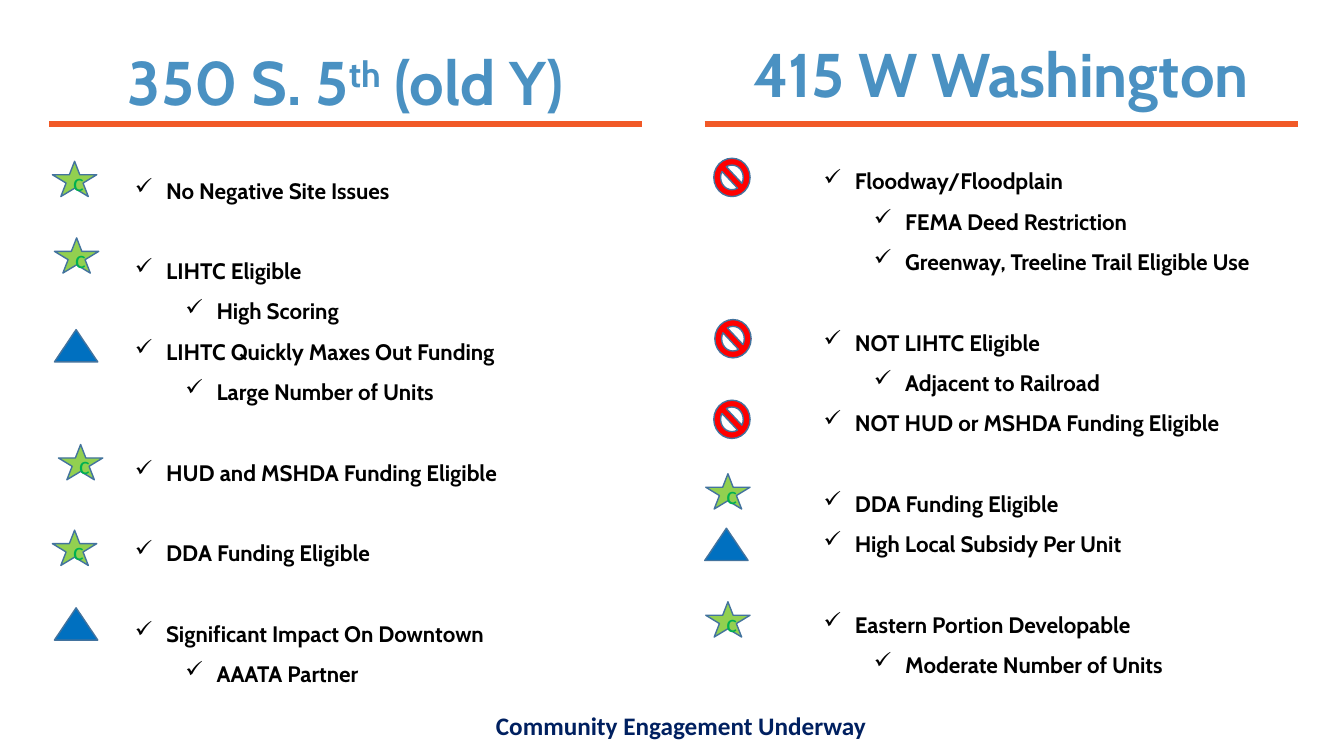
from lxml.etree import SubElement
from pptx import Presentation
from pptx.dml.color import RGBColor
from pptx.enum.shapes import MSO_CONNECTOR, MSO_SHAPE
from pptx.enum.text import MSO_ANCHOR, MSO_AUTO_SIZE, PP_ALIGN
from pptx.oxml.ns import qn
from pptx.util import Inches, Pt

COLORS = {
    "title": "4A91C2", "rule": "F15927", "text": "000000", "footer": "002060",
    "star": "92D050", "letter": "00B050", "stop": "FF0000",
    "triangle": "0070C0", "outline": "43739E",
}
FORMATS = {
    "title": {"name": "Cabin", "size": Pt(44), "bold": True},
    "text": {"name": "Cabin", "size": Pt(16), "bold": True},
    "footer": {"name": "Calibri", "size": Pt(18), "bold": True},
    "letter": {"name": "Calibri", "size": Pt(18)},
}
# Marker name: preset shape, width, height, letter
MARKERS = {
    "star": (MSO_SHAPE.STAR_5_POINT, 0.44, 0.35, "c"),
    "stop": (MSO_SHAPE.NO_SYMBOL, 0.36, 0.38, ""),
    "triangle": (MSO_SHAPE.ISOSCELES_TRIANGLE, 0.43, 0.32, ""),
}
HANGING = 0.31
LEVEL_STEP = 0.5
GROUP_GAP = Pt(28.8)  # one line of the list

# Lists hold groups of (text, level); title parts are (text, superscript)
SITES = [
    {
        "title": [("350 S. 5", False), ("th", True), (" (old Y)", False)],
        "title_at": (0.58, 0.39),
        "rule_left": 0.49,
        "list_at": (1.24, 1.57),
        "groups": [
            [("No Negative Site Issues", 0)],
            [("LIHTC Eligible", 0), ("High Scoring", 1),
             ("LIHTC Quickly Maxes Out Funding", 0), ("Large Number of Units", 1)],
            [("HUD and MSHDA Funding Eligible", 0)],
            [("DDA Funding Eligible", 0)],
            [("Significant Impact On Downtown", 0), ("AAATA Partner", 1)],
        ],
        "markers": [("star", 0.52, 1.6), ("star", 0.54, 2.36), ("triangle", 0.54, 3.27),
                    ("star", 0.58, 4.41), ("star", 0.52, 5.26), ("triangle", 0.54, 6.03)],
    },
    {
        "title": [("415 W Washington", False)],
        "title_at": (7.08, 0.31),
        "rule_left": 6.99,
        "list_at": (8.07, 1.48),
        "groups": [
            [("Floodway/Floodplain", 0), ("FEMA Deed Restriction", 1),
             ("Greenway, Treeline Trail Eligible Use", 1)],
            [("NOT LIHTC Eligible", 0), ("Adjacent to Railroad", 1),
             ("NOT HUD or MSHDA Funding Eligible", 0)],
            [("DDA Funding Eligible", 0), ("High Local Subsidy Per Unit", 0)],
            [("Eastern Portion Developable", 0), ("Moderate Number of Units", 1)],
        ],
        "markers": [("stop", 7.08, 1.57), ("stop", 7.09, 3.17), ("stop", 7.08, 3.97),
                    ("star", 7, 4.7), ("triangle", 6.99, 5.24), ("star", 7, 5.97)],
    },
]


def rgb(name):
    return RGBColor.from_string(COLORS[name])


def add_run(paragraph, text, style):
    run = paragraph.add_run()
    run.text = text
    for attribute, value in FORMATS[style].items():
        setattr(run.font, attribute, value)
    run.font.color.rgb = rgb(style)
    return run


def add_text_frame(slide, left, top, width, height):
    box = slide.shapes.add_textbox(Inches(left), Inches(top), Inches(width), Inches(height))
    frame = box.text_frame
    frame.word_wrap = True
    frame.auto_size = MSO_AUTO_SIZE.SHAPE_TO_FIT_TEXT
    return frame


def add_heading(slide, parts, style, left, top, width, height):
    paragraph = add_text_frame(slide, left, top, width, height).paragraphs[0]
    paragraph.alignment = PP_ALIGN.CENTER
    for text, superscript in parts:
        run = add_run(paragraph, text, style)
        if superscript:
            run.font._element.set("baseline", "30000")


def add_rule(slide, left, top, width):
    rule = slide.shapes.add_connector(
        MSO_CONNECTOR.STRAIGHT, Inches(left), Inches(top), Inches(left + width), Inches(top))
    rule.line.color.rgb = rgb("rule")
    rule.line.width = Pt(4.25)
    SubElement(rule._element.spPr, qn("a:effectLst"))


def add_checklist(slide, groups, left, top):
    frame = add_text_frame(slide, left, top, 5.04, 5.62)
    paragraph = None
    for group in groups:
        for position, (text, level) in enumerate(group):
            starts_group = paragraph is not None and position == 0
            paragraph = frame.paragraphs[0] if paragraph is None else frame.add_paragraph()
            paragraph.level = level
            paragraph.line_spacing = 1.5
            if starts_group:
                paragraph.space_before = GROUP_GAP
            add_run(paragraph, text, "text")
            # Check mark bullet with a hanging indent
            properties = paragraph._p.get_or_add_pPr()
            properties.set("marL", str(Inches(HANGING + level * LEVEL_STEP)))
            properties.set("indent", str(Inches(-HANGING)))
            SubElement(properties, qn("a:buChar"), char="✓")


def add_marker(slide, kind, left, top):
    preset, width, height, letter = MARKERS[kind]
    shape = slide.shapes.add_shape(
        preset, Inches(left), Inches(top), Inches(width), Inches(height))
    shape.shadow.inherit = False
    shape.fill.solid()
    shape.fill.fore_color.rgb = rgb(kind)
    shape.line.color.rgb = rgb("outline")
    shape.line.width = Pt(1)
    if letter:
        shape.text_frame.vertical_anchor = MSO_ANCHOR.MIDDLE
        paragraph = shape.text_frame.paragraphs[0]
        paragraph.alignment = PP_ALIGN.CENTER
        add_run(paragraph, letter, "letter")


def main():
    presentation = Presentation()
    presentation.slide_width = Inches(13.33)
    presentation.slide_height = Inches(7.5)
    slide = presentation.slides.add_slide(presentation.slide_layouts[6])

    # One column per site
    for site in SITES:
        add_heading(slide, site["title"], "title", *site["title_at"], 5.7, 0.84)
        add_rule(slide, site["rule_left"], 1.23, 5.88)
        add_checklist(slide, site["groups"], *site["list_at"])
        for marker in site["markers"]:
            add_marker(slide, *marker)

    # Closing line
    add_heading(slide, [("Community Engagement Underway", False)], "footer", 0.18, 7, 13.15, 0.4)
    presentation.save("out.pptx")


if __name__ == "__main__":
    main()
